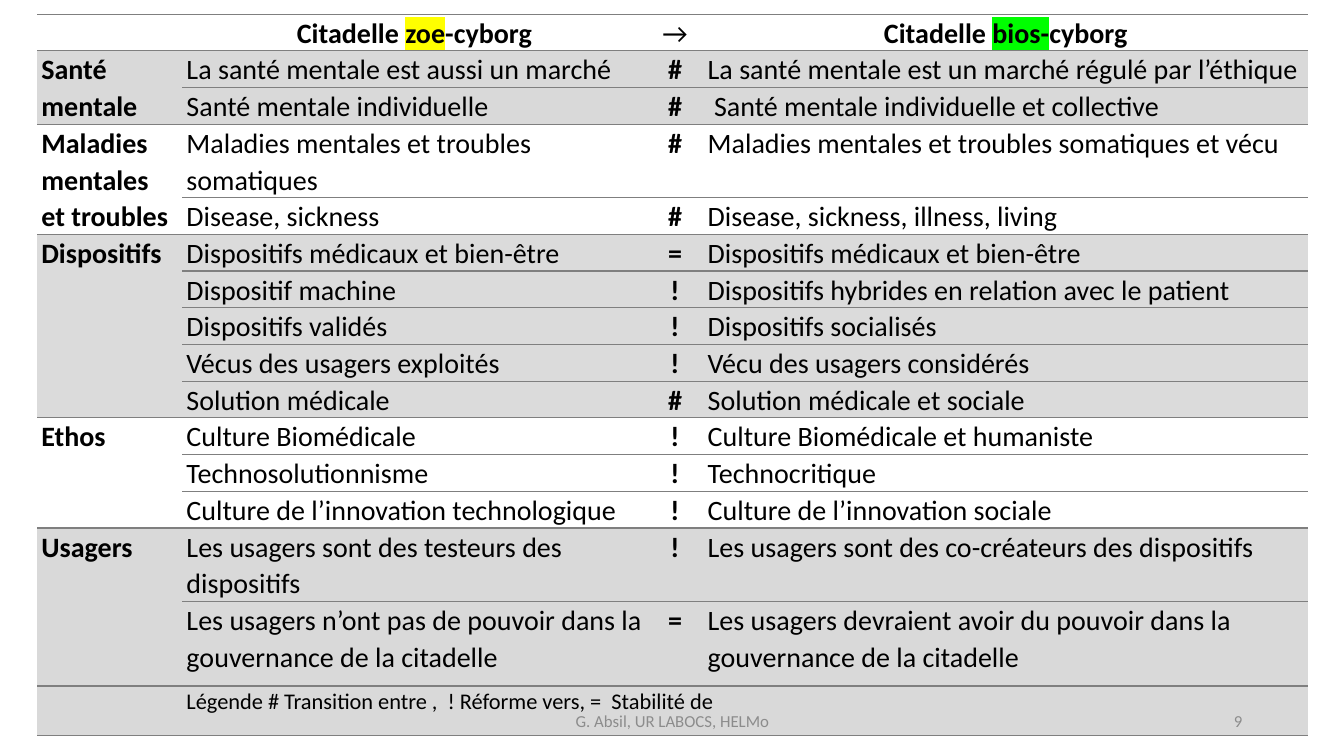
from lxml import etree
from pptx import Presentation
from pptx import util as u
from pptx.dml.color import RGBColor
from pptx.enum import text
from pptx.oxml import ns

LINE = 0.36
COLUMNS = (1.44, 4.6, 0.57, 5.99)
LEFT, CENTER, RIGHT = text.PP_ALIGN.LEFT, text.PP_ALIGN.CENTER, text.PP_ALIGN.RIGHT

# Theme, fill, rows of (zoe, sign, bios, lines of text)
THEMES = [
    ("Santé mentale", "D9D9D9", [
        ("La santé mentale est aussi un marché", "#",
         "La santé mentale est un marché régulé par l’éthique", 1),
        ("Santé mentale individuelle", "#", " Santé mentale individuelle et collective", 1)]),
    ("Maladies mentales et troubles", None, [
        ("Maladies mentales et troubles somatiques", "#",
         "Maladies mentales et troubles somatiques et vécu", 2),
        ("Disease, sickness", "#", "Disease, sickness, illness, living", 1)]),
    ("Dispositifs", "DBDBDB", [
        ("Dispositifs médicaux et bien-être", "=", "Dispositifs médicaux et bien-être", 1),
        ("Dispositif machine", "!", "Dispositifs hybrides en relation avec le patient", 1),
        ("Dispositifs validés", "!", "Dispositifs socialisés", 1),
        ("Vécus des usagers exploités", "!", "Vécu des usagers considérés", 1),
        ("Solution médicale", "#", "Solution médicale et sociale", 1)]),
    ("Ethos", None, [
        ("Culture Biomédicale", "!", "Culture Biomédicale et humaniste", 1),
        ("Technosolutionnisme", "!", "Technocritique", 1),
        ("Culture de l’innovation technologique", "!", "Culture de l’innovation sociale", 1)]),
    ("Usagers", "D9D9D9", [
        ("Les usagers sont des testeurs des dispositifs", "!",
         "Les usagers sont des co-créateurs des dispositifs", 2),
        ("Les usagers n’ont pas de pouvoir dans la gouvernance de la citadelle", "=",
         "Les usagers devraient avoir du pouvoir dans la gouvernance de la citadelle", 2.33)]),
]
LEGEND = "Légende # Transition entre ,  ! Réforme vers, =  Stabilité de"


def write(paragraph, runs, alignment=LEFT, color="000000", **font_format):
    """Add runs given as (words, highlight or None) pairs, all in one font format."""
    paragraph.alignment = alignment
    for words, highlight in runs:
        run = paragraph.add_run()
        run.text = words
        run.font.color.rgb = RGBColor.from_string(color)
        if highlight:
            mark = etree.SubElement(run.font._element, ns.qn("a:highlight"))
            etree.SubElement(mark, ns.qn("a:srgbClr"), val=highlight)
        for name, value in {"name": "Calibri", **font_format}.items():
            setattr(run.font, name, value)


def fill_cell(cell, runs, fill, alignment=LEFT, bold=False, size=20):
    for name, value in {"margin_left": 0.04, "margin_right": 0.04,
                        "margin_top": 0, "margin_bottom": 0}.items():
        setattr(cell, name, u.Inches(value))
    if fill:
        cell.fill.solid()
        cell.fill.fore_color.rgb = RGBColor.from_string(fill)
    else:
        cell.fill.background()
    properties = cell._tc.get_or_add_tcPr()
    for side in ("a:lnB", "a:lnT"):
        line = etree.Element(ns.qn(side), w=str(u.Pt(1)))
        solid = etree.SubElement(line, ns.qn("a:solidFill"))
        etree.SubElement(solid, ns.qn("a:srgbClr"), val="7F7F7F")
        properties.insert(0, line)
    paragraph = cell.text_frame.paragraphs[0]
    paragraph.line_spacing = 1.07
    paragraph.space_after = u.Pt(8)
    write(paragraph, runs, alignment, bold=bold, size=u.Pt(size))


presentation = Presentation()
presentation.slide_width = u.Inches(13.33)
presentation.slide_height = u.Inches(7.5)
slide = presentation.slides.add_slide(presentation.slide_layouts[6])

row_lines = [1] + [row[3] for theme in THEMES for row in theme[2]] + [1.36]
frame = slide.shapes.add_table(len(row_lines), len(COLUMNS), u.Inches(0.37), u.Inches(0.14),
                               u.Inches(sum(COLUMNS)), u.Inches(LINE * sum(row_lines)))
table = frame.table
table.first_row = table.horz_banding = False
# Table style without fills or grid
style = table._tbl.tblPr.find(ns.qn("a:tableStyleId"))
style.text = "{2D5ABB26-0587-4C30-8999-92F81FD0307C}"
for column, width in zip(table.columns, COLUMNS):
    column.width = u.Inches(width)
for row, lines in zip(table.rows, row_lines):
    row.height = u.Inches(LINE * lines)

headings = [
    [],
    [("Citadelle ", None), ("zoe", "FFFF00"), ("-cyborg", None)],
    [("→", None)],
    [("Citadelle ", None), ("bios-", "00FF00"), ("cyborg", None)],
]
for index, runs in enumerate(headings):
    fill_cell(table.cell(0, index), runs, None, CENTER, bold=index != 2)

top = 1
for theme, fill, rows in THEMES:
    for offset, (zoe, sign, bios, _) in enumerate(rows):
        title = [] if offset else [(theme, None)]
        fill_cell(table.cell(top + offset, 0), title, fill, bold=True)
        fill_cell(table.cell(top + offset, 1), [(zoe, None)], fill)
        fill_cell(table.cell(top + offset, 2), [(sign, None)], fill, CENTER, bold=True)
        fill_cell(table.cell(top + offset, 3), [(bios, None)], fill)
    table.cell(top, 0).merge(table.cell(top + len(rows) - 1, 0))
    top += len(rows)

for index in range(len(COLUMNS)):
    fill_cell(table.cell(top, index), [(LEGEND, None)] if index == 1 else [], "D9D9D9", size=16)
table.cell(top, 1).merge(table.cell(top, 3))

for words, left, width, alignment in [("G. Absil, UR LABOCS, HELMo", 4.42, 4.5, CENTER),
                                      ("9", 9.42, 3, RIGHT)]:
    footer = slide.shapes.add_textbox(u.Inches(left), u.Inches(6.95), u.Inches(width), u.Inches(0.4))
    footer.text_frame.word_wrap = True
    footer.text_frame.vertical_anchor = text.MSO_ANCHOR.MIDDLE
    write(footer.text_frame.paragraphs[0], [(words, None)], alignment, "8C8C8C", size=u.Pt(12))

presentation.save("out.pptx")
